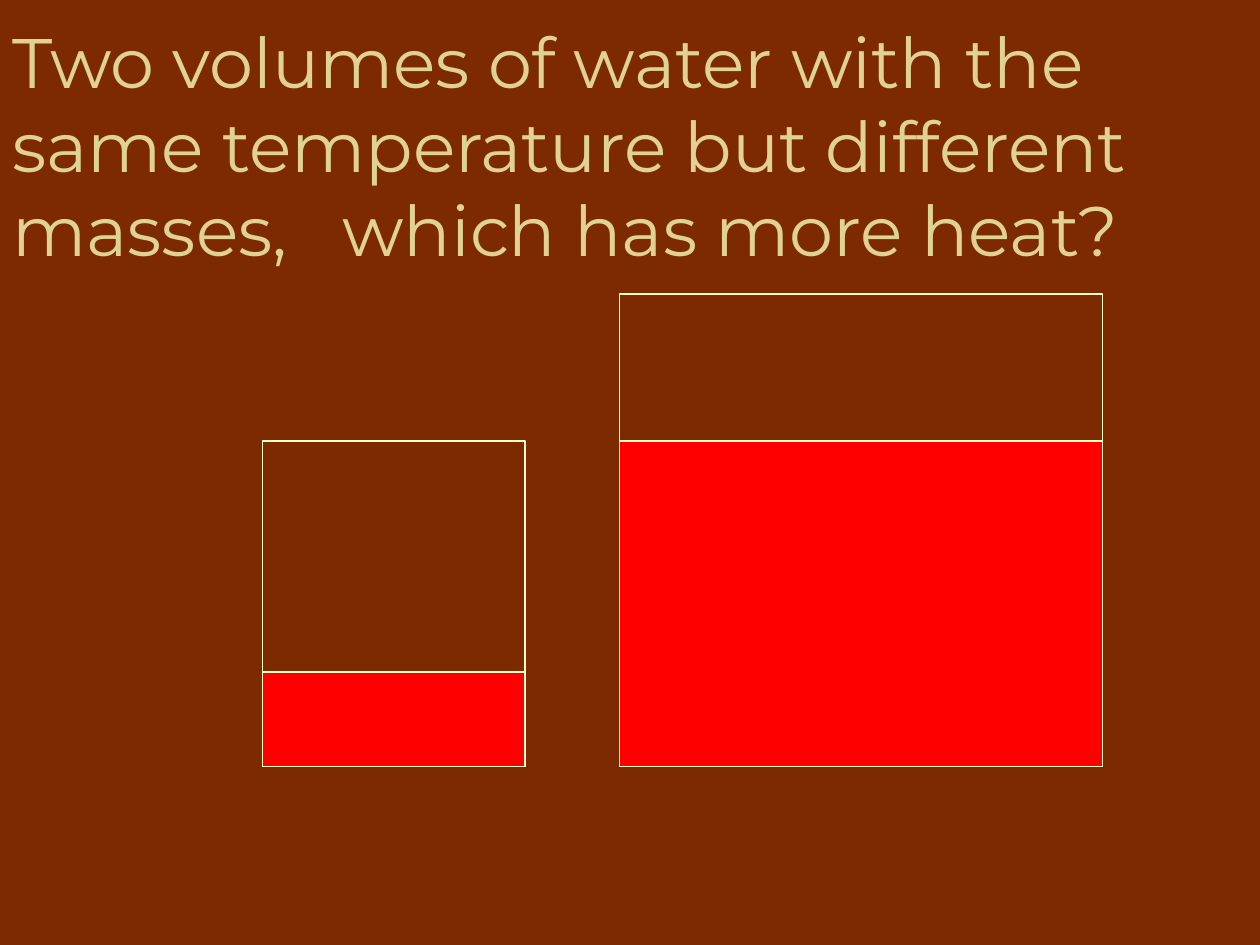
from dataclasses import dataclass

from pptx import Presentation
from pptx import util as u
from pptx.dml.color import RGBColor
from pptx.enum import shapes, text

COLS, ROWS = 120, 90  # grid over the whole slide
FLOOR = 73            # row on which both containers stand


@dataclass(frozen=True)
class Theme:
    background: str = "7E2A00"
    title: str = "DFD293"
    outline: str = "FFFFCC"
    water: str = "FF0000"
    font: str = "Montserrat"
    title_size: int = 40
    line_width: float = 0.75


THEME = Theme()


def rgb(value):
    return RGBColor.from_string(value)


def box(prs, left, top, width, height):
    """Turn grid columns and rows into slide lengths."""
    col, row = prs.slide_width / COLS, prs.slide_height / ROWS
    return [round(n) for n in (left * col, top * row, width * col, height * row)]


def add_title(prs, slide, parts):
    """Write (words, letter spacing in points) parts as one heading."""
    tf = slide.shapes.add_textbox(*box(prs, 0, 3.6, COLS, 20.4)).text_frame
    frame_format = {"word_wrap": True, "vertical_anchor": text.MSO_ANCHOR.MIDDLE}
    for name, value in frame_format.items():
        setattr(tf, name, value)
    p = tf.paragraphs[0]
    font_format = {"name": THEME.font, "size": u.Pt(THEME.title_size)}
    for words, spacing in parts:
        r = p.add_run()
        r.text = words
        for name, value in font_format.items():
            setattr(r.font, name, value)
        r.font.color.rgb = rgb(THEME.title)
        if spacing:
            r._r.get_or_add_rPr().set("spc", str(spacing * 100))


def add_rectangle(prs, parent, left, width, height, fill=None):
    """Stand an outlined rectangle on the floor row."""
    sp = parent.shapes.add_shape(
        shapes.MSO_SHAPE.RECTANGLE,
        *box(prs, left, FLOOR - height, width, height))
    sp.shadow.inherit = False
    sp.line.color.rgb = rgb(THEME.outline)
    sp.line.width = u.Pt(THEME.line_width)
    if fill:
        sp.fill.solid()
        sp.fill.fore_color.rgb = rgb(fill)
    else:
        sp.fill.background()


def add_container(prs, parent, left, width, height, level):
    add_rectangle(prs, parent, left, width, height)
    add_rectangle(prs, parent, left, width, level, THEME.water)


def main():
    prs = Presentation()
    prs.slide_width, prs.slide_height = u.Inches(10), u.Inches(7.5)
    slide = prs.slides.add_slide(prs.slide_layouts[6])
    slide.background.fill.solid()
    slide.background.fill.fore_color.rgb = rgb(THEME.background)

    add_title(prs, slide, [
        ("Two volumes of water with the same temperature "
         "but different masses,", 0),
        (" ", 21),  # wide pause before the question
        ("which has more heat?", 0),
    ])
    small = slide.shapes.add_group_shape()
    add_container(prs, small, left=25, width=25, height=31, level=9)
    add_container(prs, slide, left=59, width=46, height=45, level=31)
    prs.save("out.pptx")


if __name__ == "__main__":
    main()
